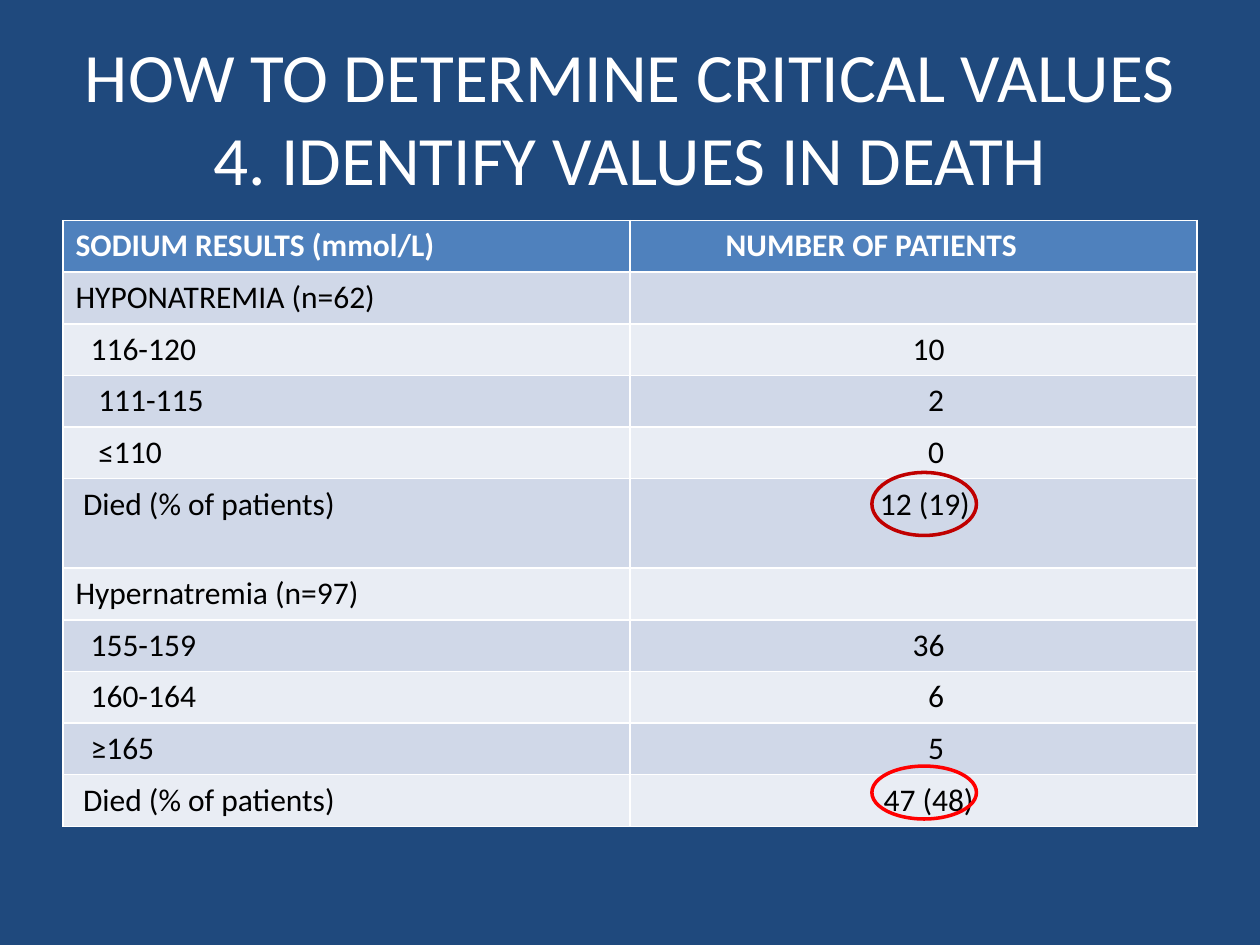
from pptx import Presentation
from pptx.dml.color import RGBColor
from pptx.enum.shapes import MSO_SHAPE
from pptx.enum.text import MSO_ANCHOR, MSO_AUTO_SIZE, PP_ALIGN
from pptx.util import Inches, Pt

NAVY = RGBColor(0x1F, 0x49, 0x7D)
BLUE = RGBColor(0x4F, 0x81, 0xBD)
BAND_DARK = RGBColor(0xD0, 0xD8, 0xE8)
BAND_LIGHT = RGBColor(0xE9, 0xED, 0xF4)
WHITE = RGBColor(0xFF, 0xFF, 0xFF)
BLACK = RGBColor(0x00, 0x00, 0x00)
DARK_RED = RGBColor(0xC0, 0x00, 0x00)
RED = RGBColor(0xFF, 0x00, 0x00)

TITLE = ["HOW TO DETERMINE CRITICAL VALUES", "4. IDENTIFY VALUES IN DEATH"]
HEADER = ("SODIUM RESULTS (mmol/L)", 0, "NUMBER OF PATIENTS", 11)
# Label, its indent steps, patient count, its indent steps
RESULTS = [
    ("HYPONATREMIA (n=62)", 0, "", 0),
    ("116-120", 2, "10", 4),
    ("111-115", 3, "2", 6),
    ("≤110", 3, "0", 6),
    ("Died (% of patients)", 1, "12 (19)", 3),
    ("Hypernatremia (n=97)", 0, "", 0),
    ("155-159", 2, "36", 4),
    ("160-164", 2, "6", 6),
    ("≥165", 2, "5", 6),
    ("Died (% of patients)", 1, "47 (48)", 4),
]
ROW_HEIGHT = 0.41
TALL_ROW, TALL_HEIGHT = 5, 0.71
CELL_MARGIN, INDENT_STEP = 0.1, 0.06


class SlideBuilder:
    font_name = "Calibri"

    def __init__(self, prs):
        self.slide = prs.slides.add_slide(prs.slide_layouts[5])
        fill = self.slide.background.fill
        fill.solid()
        fill.fore_color.rgb = NAVY

    def style(self, p, size, color, bold=False, align=PP_ALIGN.LEFT):
        p.alignment = align
        p.font.name = self.font_name
        p.font.size = Pt(size)
        p.font.bold = bold
        p.font.color.rgb = color

    def title(self, lines, x, y, w, h):
        sp = self.slide.shapes.title
        sp.left, sp.top, sp.width, sp.height = map(Inches, (x, y, w, h))
        tf = sp.text_frame
        tf.auto_size = MSO_AUTO_SIZE.NONE
        tf.vertical_anchor = MSO_ANCHOR.MIDDLE
        p = tf.paragraphs[0]
        for i, line in enumerate(lines):
            if i:
                p.add_line_break()
            p.add_run().text = line
        self.style(p, 39.6, WHITE, align=PP_ALIGN.CENTER)

    def cell(self, cell, text, indent, fill, color, bold, align):
        cell.fill.solid()
        cell.fill.fore_color.rgb = fill
        cell.margin_left = Inches(CELL_MARGIN + indent * INDENT_STEP)
        cell.text = text
        self.style(cell.text_frame.paragraphs[0], 18, color, bold, align)

    def table(self, rows, x, y, w):
        height = ROW_HEIGHT * (len(rows) - 1) + TALL_HEIGHT
        frame = self.slide.shapes.add_table(
            len(rows), 2, Inches(x), Inches(y), Inches(w), Inches(height))
        table = frame.table
        for i, (label, label_indent, count, count_indent) in enumerate(rows):
            table.rows[i].height = Inches(
                TALL_HEIGHT if i == TALL_ROW else ROW_HEIGHT)
            if i == 0:
                look = BLUE, WHITE, True
                count_align = PP_ALIGN.LEFT
            else:
                look = BAND_DARK if i % 2 else BAND_LIGHT, BLACK, False
                count_align = PP_ALIGN.CENTER
            self.cell(table.cell(i, 0), label, label_indent, *look, PP_ALIGN.LEFT)
            self.cell(table.cell(i, 1), count, count_indent, *look, count_align)

    def ring(self, color, x, y, w, h):
        sp = self.slide.shapes.add_shape(
            MSO_SHAPE.OVAL, Inches(x), Inches(y), Inches(w), Inches(h))
        sp.shadow.inherit = False
        sp.fill.background()
        sp.line.color.rgb = color
        sp.line.width = Pt(2)


def main():
    prs = Presentation()
    prs.slide_width, prs.slide_height = Inches(10), Inches(7.5)
    s = SlideBuilder(prs)
    s.title(TITLE, 0.5, 0.3, 9, 1.25)
    s.table([HEADER] + RESULTS, 0.5, 1.75, 9)
    s.ring(DARK_RED, 6.92, 3.75, 0.83, 0.5)
    s.ring(RED, 6.92, 6.08, 0.83, 0.42)
    prs.save("out.pptx")


if __name__ == "__main__":
    main()
